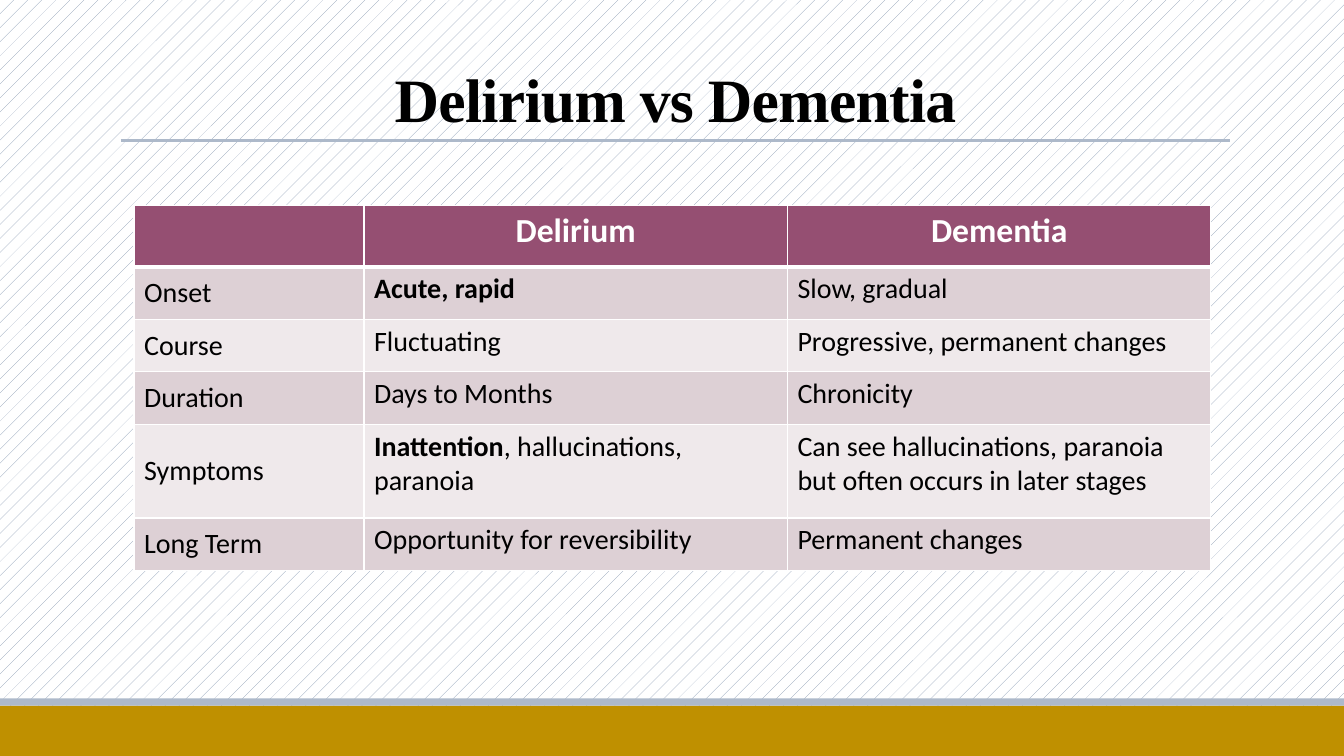
"""Build the Delirium vs Dementia comparison slide."""
from lxml.etree import SubElement
from pptx import Presentation
from pptx.dml.color import RGBColor
from pptx.enum.dml import MSO_PATTERN
from pptx.enum.shapes import MSO_CONNECTOR, MSO_SHAPE
from pptx.enum.text import MSO_ANCHOR, PP_ALIGN
from pptx.oxml.ns import qn
from pptx.util import Inches, Pt

BLACK = RGBColor(0x00, 0x00, 0x00)
WHITE = RGBColor(0xFF, 0xFF, 0xFF)
SLATE = RGBColor(0x84, 0x96, 0xB0)
PALE_BLUE = RGBColor(0xAD, 0xB9, 0xCA)
GOLD = RGBColor(0xBF, 0x90, 0x00)
PLUM = RGBColor(0x95, 0x4F, 0x72)
BAND_DARK = RGBColor(0xDD, 0xD0, 0xD5)
BAND_LIGHT = RGBColor(0xEF, 0xE9, 0xEB)


def add_run(paragraph, text, font_name, size, color, bold):
    run = paragraph.add_run()
    run.text = text
    run.font.name = font_name
    run.font.size = Pt(size)
    run.font.color.rgb = color
    run.font.bold = bold
    return run


def add_border(cell, side, points):
    properties = cell._tc.get_or_add_tcPr()
    line = SubElement(properties, qn(f"a:ln{side}"), w=str(Pt(points)))
    fill = SubElement(line, qn("a:solidFill"))
    SubElement(fill, qn("a:srgbClr"), val=str(WHITE))


presentation = Presentation()
presentation.slide_width = Inches(13.33)
presentation.slide_height = Inches(7.5)
slide = presentation.slides.add_slide(presentation.slide_layouts[6])

background = slide.background.fill
background.patterned()
background.pattern = MSO_PATTERN.PERCENT_5
background.fore_color.rgb = SLATE
background.back_color.rgb = WHITE

for top, height, color in [(7, 0.5, GOLD), (6.93, 0.07, PALE_BLUE)]:
    footer_band = slide.shapes.add_shape(
        MSO_SHAPE.RECTANGLE, 0, Inches(top), presentation.slide_width, Inches(height))
    footer_band.shadow.inherit = False
    footer_band.fill.solid()
    footer_band.fill.fore_color.rgb = color
    footer_band.line.fill.background()

title_box = slide.shapes.add_textbox(Inches(1.2), Inches(0.31), Inches(11), Inches(1.08))
title_frame = title_box.text_frame
title_frame.word_wrap = True
title_frame.vertical_anchor = MSO_ANCHOR.BOTTOM
title = title_frame.paragraphs[0]
title.alignment = PP_ALIGN.CENTER
title.line_spacing = 0.85
title_run = add_run(title, "Delirium vs Dementia", "Times New Roman", 44, BLACK, True)
title_run.font._element.set("spc", "-50")

title_rule = slide.shapes.add_connector(
    MSO_CONNECTOR.STRAIGHT, Inches(1.2), Inches(1.39), Inches(12.2), Inches(1.39))
title_rule.line.color.rgb = PALE_BLUE
title_rule.line.width = Pt(2.25)
SubElement(title_rule._element.spPr, qn("a:effectLst"))

# Each cell is a list of (text, bold) runs.
rows = [
    (0.61, [[], [("Delirium", True)], [("Dementia", True)]]),
    (0.52, [[("Onset", False)], [("Acute, rapid", True)], [("Slow, gradual", False)]]),
    (0.52, [[("Course", False)], [("Fluctuating", False)],
            [("Progressive, permanent changes", False)]]),
    (0.52, [[("Duration", False)], [("Days to Months", False)], [("Chronicity", False)]]),
    (0.93, [[("Symptoms", False)],
            [("Inattention", True), (", hallucinations, paranoia", False)],
            [("Can see hallucinations, paranoia but often occurs in later stages", False)]]),
    (0.52, [[("Long Term", False)], [("Opportunity for reversibility", False)],
            [("Permanent changes", False)]]),
]
column_widths = [2.28, 4.2, 4.2]

table = slide.shapes.add_table(
    len(rows), len(column_widths), Inches(1.33), Inches(2.04),
    Inches(sum(column_widths)), Inches(sum(height for height, _ in rows))).table
for column, width in zip(table.columns, column_widths):
    column.width = Inches(width)

for row_index, (height, row_cells) in enumerate(rows):
    table.rows[row_index].height = Inches(height)
    is_header = row_index == 0
    for column_index, runs in enumerate(row_cells):
        cell = table.cell(row_index, column_index)
        for side in "LRTB":
            touches_header = (is_header and side == "B") or (row_index == 1 and side == "T")
            add_border(cell, side, 3 if touches_header else 1)
        cell.fill.solid()
        if is_header:
            cell.fill.fore_color.rgb = PLUM
        else:
            cell.fill.fore_color.rgb = BAND_DARK if row_index % 2 else BAND_LIGHT
        if column_index == 0 and not is_header:
            cell.vertical_anchor = MSO_ANCHOR.MIDDLE
        paragraph = cell.text_frame.paragraphs[0]
        if is_header:
            paragraph.alignment = PP_ALIGN.CENTER
        for text, bold in runs:
            add_run(paragraph, text, "Calibri", 24 if is_header else 20,
                    WHITE if is_header else BLACK, bold)

presentation.save("out.pptx")
